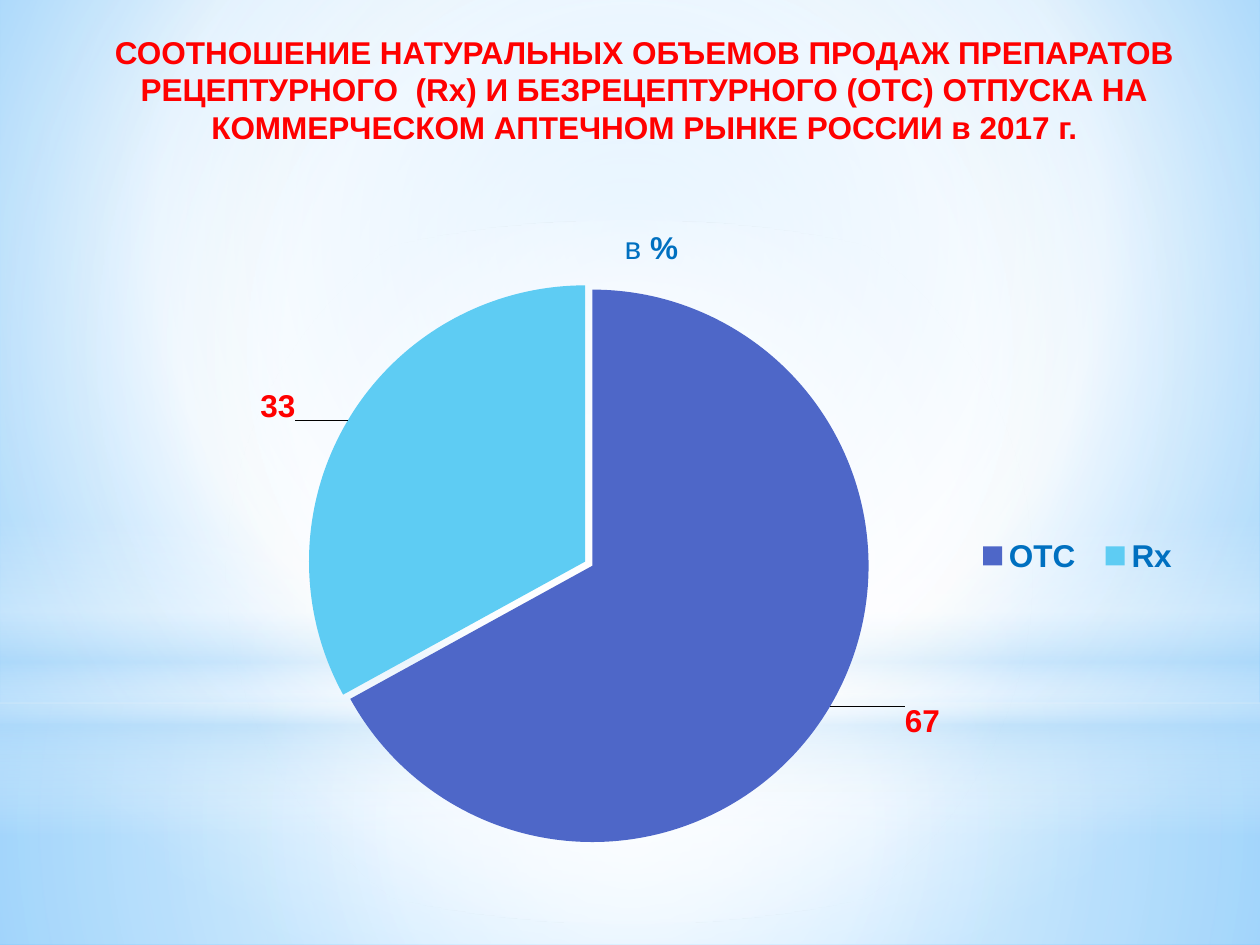
from lxml import etree
from pptx import Presentation, util as u
from pptx.chart.data import CategoryChartData
from pptx.dml.color import RGBColor
from pptx.enum import chart as ch, shapes, text
from pptx.oxml import parse_xml
from pptx.oxml.ns import nsdecls, qn

C = {"white": "FFFFFF", "mist": "B4DCFA", "sky": "9ED5FF", "deep": "5BB9FF",
     "red": "FF0000", "blue": "0070C0", "otc": "4E67C8", "rx": "5ECCF3"}
MIDDLE = (50, 50, 50, 50)

prs = Presentation()
prs.slide_width, prs.slide_height = u.Inches(10), u.Inches(7.5)
W, H = prs.slide_width, prs.slide_height
s = prs.slides.add_slide(prs.slide_layouts[6])


def gradient(fill, element, stops, focus):
    fill.solid()
    gs = "".join(
        f'<a:gs pos="{pos * 1000}"><a:srgbClr val="{C[color]}">'
        f'<a:alpha val="{alpha * 1000}"/></a:srgbClr></a:gs>'
        for pos, color, alpha in stops)
    if focus:
        l, t, r, b = (v * 1000 for v in focus)
        shade = (f'<a:path path="circle"><a:fillToRect l="{l}" t="{t}" '
                 f'r="{r}" b="{b}"/></a:path>')
    else:
        shade = '<a:lin ang="5400000" scaled="0"/>'
    solid = element.find(".//" + qn("a:solidFill"))
    solid.getparent().replace(solid, parse_xml(
        f'<a:gradFill {nsdecls("a")} rotWithShape="1"><a:gsLst>{gs}</a:gsLst>'
        f'{shade}</a:gradFill>'))


def place(parent, index, **shares):
    for old in parent.findall(qn("c:layout")):
        parent.remove(old)
    layout = etree.Element(qn("c:layout"))
    manual = etree.SubElement(layout, qn("c:manualLayout"))
    for tag, value in shares.items():
        etree.SubElement(manual, qn("c:" + tag)).set("val", str(value))
    parent.insert(index, layout)


gradient(s.background.fill, s._element.cSld,
         [(0, "sky", 100), (60, "white", 100), (100, "deep", 100)], (20, 10, 20, 60))

RECT, OVAL = shapes.MSO_SHAPE.RECTANGLE, shapes.MSO_SHAPE.OVAL
glows = [
    (RECT, 0.744, 0.256, MIDDLE,
     [(0, "white", 91), (37, "white", 76), (100, "mist", 79)]),
    (RECT, 0, 0.744, MIDDLE,
     [(0, "white", 89), (48, "white", 62), (100, "mist", 79)]),
    (RECT, 0.55, 0.333, None,
     [(0, "white", 0), (29, "white", 30), (45, "mist", 40),
      (55, "white", 26), (65, "mist", 60), (100, "white", 0)]),
    (OVAL, 0.233, 0.744, MIDDLE, [(0, "white", 100), (56, "white", 0)]),
]
for kind, top, height, focus, stops in glows:
    sp = s.shapes.add_shape(kind, 0, int(H * top), W, int(H * height))
    sp.shadow.inherit = False
    sp.line.fill.background()
    gradient(sp.fill, sp._element.spPr, stops, focus)

tf = s.shapes.add_textbox(int(W * 0.051), int(H * 0.028),
                          int(W * 0.921), int(H * 0.175)).text_frame
tf.word_wrap = True
p = tf.paragraphs[0]
p.alignment = text.PP_ALIGN.CENTER
r = p.add_run()
r.text = ("СООТНОШЕНИЕ НАТУРАЛЬНЫХ ОБЪЕМОВ ПРОДАЖ ПРЕПАРАТОВ РЕЦЕПТУРНОГО  (Rx) "
          "И БЕЗРЕЦЕПТУРНОГО (OTC) ОТПУСКА НА КОММЕРЧЕСКОМ АПТЕЧНОМ РЫНКЕ "
          "РОССИИ в 2017 г.")

data = CategoryChartData()
data.categories = ["ОТС", "Rx"]
data.add_series("Series 1", [67, 33])
chart = s.shapes.add_chart(ch.XL_CHART_TYPE.PIE, int(W * 0.067), int(H * 0.216),
                           int(W * 0.906), int(H * 0.696), data).chart
chart.font.name, chart.font.size = "Lato", u.Pt(18)

chart.has_title = True
title = chart.chart_title
title_p = title.text_frame.paragraphs[0]
unit, percent = title_p.add_run(), title_p.add_run()
unit.text, percent.text = "в ", "%"
title.include_in_layout = False
place(title._element, 1, xMode="edge", yMode="edge", x=0.47, y=0.03)

chart.has_legend = True
legend = chart.legend
legend.position = ch.XL_LEGEND_POSITION.RIGHT
legend.include_in_layout = False
place(legend._element, 1, xMode="edge", yMode="edge", x=0.77, y=0.49, w=0.2, h=0.09)

plot = chart.plots[0]
plot.vary_by_categories = True
place(chart._chartSpace.chart.plotArea, 0, layoutTarget="inner", xMode="edge",
      yMode="edge", x=0.2, y=0.13, w=0.49, h=0.84)

series = plot.series[0]
labels = series.data_labels
labels.show_value = True
fonts = [(r.font, "red", True), (unit.font, "blue", False), (percent.font, "blue", True),
         (legend.font, "blue", True), (labels.font, "red", True)]
for i, (color, dx, dy) in enumerate([("otc", 0.06, -0.01), ("rx", -0.04, 0.01)]):
    point = series.points[i]
    point.format.fill.solid()
    point.format.fill.fore_color.rgb = RGBColor.from_string(C[color])
    label = point.data_label
    label.position = ch.XL_LABEL_POSITION.OUTSIDE_END
    fonts.append((label.font, "red", True))
    place(labels._element.findall(qn("c:dLbl"))[i], 1, x=dx, y=dy)
rx = series._element.findall(qn("c:dPt"))[1]
explosion = etree.Element(qn("c:explosion"))
explosion.set("val", "3")
rx.find(qn("c:spPr")).addprevious(explosion)

for font, color, bold in fonts:
    for name, value in {"name": "Arial", "size": u.Pt(18), "bold": bold}.items():
        setattr(font, name, value)
    font.color.rgb = RGBColor.from_string(C[color])

prs.save("out.pptx")
